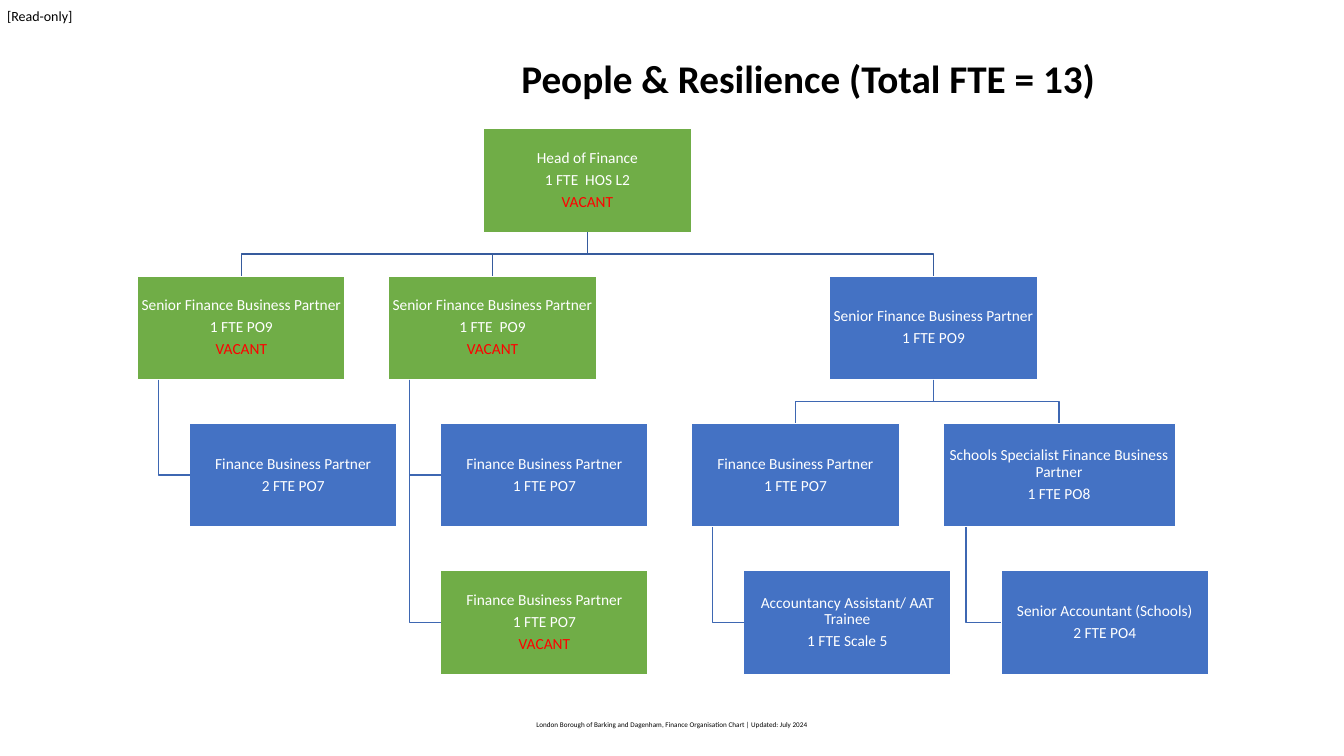
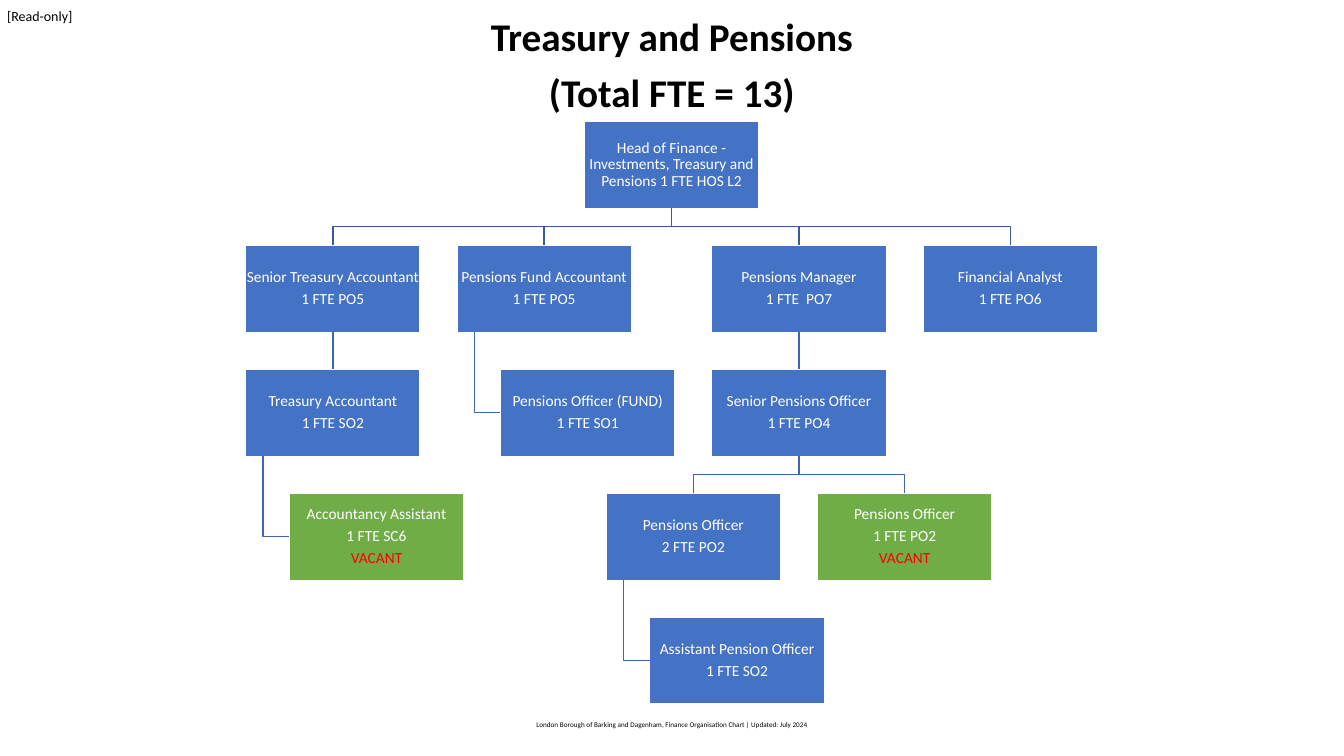
from dataclasses import dataclass, field

from lxml.etree import SubElement
from pptx import Presentation
from pptx.dml.color import RGBColor
from pptx.enum.shapes import MSO_CONNECTOR, MSO_SHAPE
from pptx.enum.text import MSO_ANCHOR, PP_ALIGN
from pptx.oxml.ns import qn
from pptx.util import Cm, Pt

COLOURS = {
    "filled": "4472C4",
    "vacant": "70AD47",
    "warning": "FF0000",
    "white": "FFFFFF",
    "black": "000000",
    "top link": "365B9D",
    "link": "3E67B2",
}
FONT = "Calibri"
FOOTER = ("London Borough of Barking and Dagenham, Finance Organisation Chart"
          " | Updated: July 2024")

# Chart proportions, as multiples of the usual box width
HEIGHT, PITCH, GAP = 0.5, 0.71, 0.21
INDENT, STEM = 0.25, 0.1  # shares of the parent's own width

CENTRED = {"alignment": PP_ALIGN.CENTER}
TITLE = {**CENTRED, "line_spacing": 0.9}
BOX_TEXT = {**TITLE, "space_after": Pt(3.85)}


@dataclass
class Post:
    """A box of the chart; hanging children are stacked beside a stem."""
    lines: list
    children: list = field(default_factory=list)
    hanging: bool = False
    vacant: bool = False
    width: float = 1
    left: float = 0
    level: int = 0

    def family(self):
        return [self] + [post for child in self.children for post in child.family()]

    def move(self, distance):
        for post in self.family():
            post.left += distance


def colour(name):
    return RGBColor.from_string(COLOURS[name])


def set_values(target, values):
    for name, value in values.items():
        setattr(target, name, value)


def write_lines(shape, lines, size, paragraph, inset, anchor=MSO_ANCHOR.MIDDLE,
                ink="black", bold=False, space_before=None):
    frame = shape.text_frame
    margins = ("margin_left", "margin_top", "margin_right", "margin_bottom")
    set_values(frame, {"word_wrap": True, "vertical_anchor": anchor,
                       **dict.fromkeys(margins, Cm(inset))})
    for index, line in enumerate(lines):
        para = frame.add_paragraph() if index else frame.paragraphs[0]
        set_values(para, paragraph)
        if index and space_before:
            para.space_before = space_before
        span = para.add_run()
        span.text = line
        set_values(span.font, {"name": FONT, "size": Pt(size), "bold": bold})
        span.font.color.rgb = colour("warning" if line == "VACANT" else ink)


def add_text(page, place, lines, **style):
    box = page.shapes.add_textbox(*map(Cm, place))
    write_lines(box, lines, **style)


def add_page(deck, title_lines, title_place):
    page = deck.slides.add_slide(deck.slide_layouts[6])
    add_text(page, (0.18, 0.18, 2.2, 0.43), ["[Read-only]"], size=10,
             paragraph={}, inset=0, anchor=MSO_ANCHOR.TOP)
    add_text(page, (0, 17.45, 33.87, 1.6), [FOOTER], size=5.1,
             paragraph=CENTRED, inset=0.13)
    add_text(page, title_place, title_lines, size=28, paragraph=TITLE,
             inset=0.5, bold=True, space_before=Pt(10))
    return page


def arrange(post, level=0):
    """Pack each branch against its neighbours and centre its parent above."""
    post.level = level
    placed = []
    for index, child in enumerate(post.children):
        if post.hanging:
            arrange(child, level + 1 + index)
            child.move(post.width * INDENT)
            continue
        arrange(child, level + 1)
        child.move(max((other.left + other.width + GAP - own.left
                        for other in placed for own in child.family()
                        if other.level == own.level), default=0))
        placed += child.family()
    if post.children and not post.hanging:
        first, last = post.children[0], post.children[-1]
        post.left = (first.left + last.left + last.width - post.width) / 2


def add_post(page, post, left, top, unit):
    box = page.shapes.add_shape(
        MSO_SHAPE.RECTANGLE, Cm(left + post.left * unit),
        Cm(top + post.level * PITCH * unit), Cm(post.width * unit), Cm(HEIGHT * unit))
    box.shadow.inherit = False
    box.fill.solid()
    box.fill.fore_color.rgb = colour("vacant" if post.vacant else "filled")
    box.line.color.rgb = colour("white")
    box.line.width = Pt(1)
    lines = post.lines + ["VACANT"] if post.vacant else post.lines
    write_lines(box, lines, size=11, paragraph=BOX_TEXT, inset=0.02, ink="white")
    return box


def add_straight_link(page, upper, lower):
    link = page.shapes.add_connector(MSO_CONNECTOR.STRAIGHT, 0, 0, 0, 0)
    link.begin_connect(upper, 2)
    link.end_connect(lower, 0)
    return link


def add_bent_link(page, points):
    builder = page.shapes.build_freeform(*points[0], scale=1.0)
    builder.add_line_segments(points[1:], close=False)
    link = builder.convert_to_shape()
    link.fill.background()
    return link


def add_link(page, parent, upper, lower):
    bottom = upper.top + upper.height
    start, end = upper.left + upper.width // 2, lower.left + lower.width // 2
    if parent.hanging:
        stem = upper.left + int(upper.width * STEM)
        middle = lower.top + lower.height // 2
        link = add_bent_link(page, [(stem, bottom), (stem, middle), (lower.left, middle)])
    elif abs(start - end) < Cm(0.05):
        link = add_straight_link(page, upper, lower)
    else:
        middle = (bottom + lower.top) // 2
        link = add_bent_link(page, [(start, bottom), (start, middle),
                                    (end, middle), (end, lower.top)])
    link.line.color.rgb = colour("link" if parent.level else "top link")
    link.line.width = Pt(1)
    SubElement(link.element.spPr, qn("a:effectLst"))


def add_chart_of_posts(page, head, left, top, unit):
    arrange(head)
    posts = head.family()
    boxes = {id(post): add_post(page, post, left, top, unit) for post in posts}
    for parent in posts:
        for child in parent.children:
            add_link(page, parent, boxes[id(parent)], boxes[id(child)])


def people_posts():
    senior, partner = "Senior Finance Business Partner", "Finance Business Partner"
    return Post(["Head of Finance", "1 FTE  HOS L2"], vacant=True, children=[
        Post([senior, "1 FTE PO9"], vacant=True, hanging=True, children=[
            Post([partner, "2 FTE PO7"])]),
        Post([senior, "1 FTE  PO9"], vacant=True, hanging=True, children=[
            Post([partner, "1 FTE PO7"]),
            Post([partner, "1 FTE PO7"], vacant=True)]),
        Post([senior, "1 FTE PO9"], children=[
            Post([partner, "1 FTE PO7"], hanging=True, children=[
                Post(["Accountancy Assistant/ AAT Trainee", "1 FTE Scale 5"])]),
            Post(["Schools Specialist Finance Business Partner", "1 FTE PO8"],
                 width=1.12, hanging=True, children=[
                     Post(["Senior Accountant (Schools)", "2 FTE PO4"])])])])


def treasury_posts():
    head = "Head of Finance - Investments, Treasury and Pensions 1 FTE HOS L2"
    return Post([head], children=[
        Post(["Senior Treasury Accountant", "1 FTE PO5"], children=[
            Post(["Treasury Accountant", "1 FTE SO2"], hanging=True, children=[
                Post(["Accountancy Assistant", "1 FTE SC6"], vacant=True)])]),
        Post(["Pensions Fund Accountant", "1 FTE PO5"], hanging=True, children=[
            Post(["Pensions Officer (FUND)", "1 FTE SO1"])]),
        Post(["Pensions Manager", "1 FTE  PO7"], children=[
            Post(["Senior Pensions Officer", "1 FTE PO4"], children=[
                Post(["Pensions Officer", "2 FTE PO2"], hanging=True, children=[
                    Post(["Assistant Pension Officer", "1 FTE SO2"])]),
                Post(["Pensions Officer", "1 FTE PO2"], vacant=True)])]),
        Post(["Financial Analyst", "1 FTE PO6"])])


def main():
    deck = Presentation()
    deck.slide_width, deck.slide_height = Cm(33.87), Cm(19.05)
    people = add_page(deck, ["People & Resilience (Total FTE = 13)"],
                      (7.26, 0.18, 26.21, 3.73))
    add_chart_of_posts(people, people_posts(), left=3.47, top=3.24, unit=5.23)
    treasury = add_page(deck, ["Treasury and Pensions", "(Total FTE = 13)"],
                        (7.19, 0.03, 19.48, 3.3))
    add_chart_of_posts(treasury, treasury_posts(), left=6.19, top=3.05, unit=4.4)
    deck.save("out.pptx")


if __name__ == "__main__":
    main()
